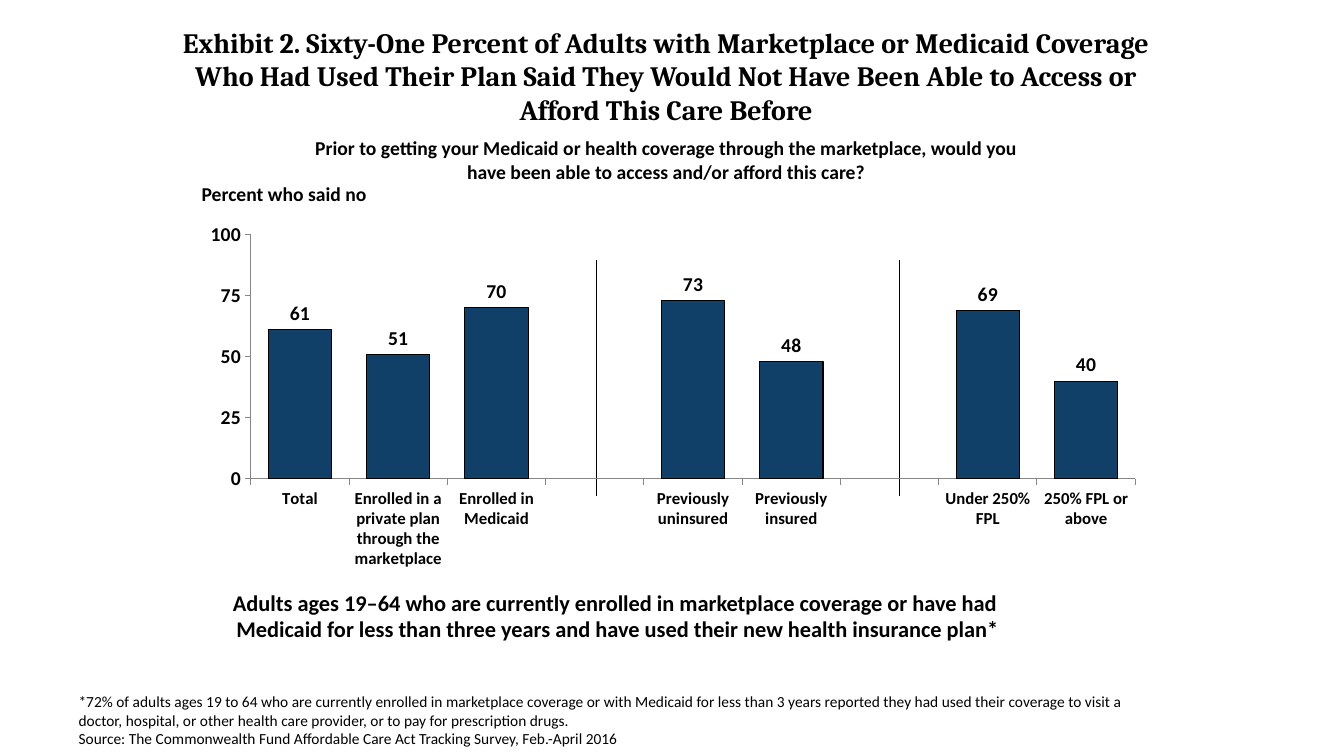
"""Build the slide on access to care before marketplace or Medicaid coverage."""
import lxml.etree
import pptx
import pptx.chart.data
import pptx.dml.color
import pptx.enum.chart
import pptx.enum.shapes
import pptx.enum.text
import pptx.oxml
import pptx.oxml.ns
import pptx.util

Cm = pptx.util.Cm
Pt = pptx.util.Pt
BLACK = pptx.dml.color.RGBColor(0x00, 0x00, 0x00)
NAVY = pptx.dml.color.RGBColor(0x10, 0x40, 0x68)
GRAY = pptx.dml.color.RGBColor(0x86, 0x86, 0x86)
CENTER = pptx.enum.text.PP_ALIGN.CENTER
LEFT = pptx.enum.text.PP_ALIGN.LEFT

ANSWERS = [
    ("Total", 61),
    ("Enrolled in a private plan through the marketplace", 51),
    ("Enrolled in Medicaid", 70),
    ("   ", None),
    ("Previously uninsured", 73),
    ("Previously insured", 48),
    ("  ", None),
    ("Under 250% FPL", 69),
    ("250% FPL or above", 40),
]
PLOT_AREA = {"x": 0.066, "y": 0.07, "w": 0.918, "h": 0.658}


class ExhibitPage:
    """Hold the style and the current slide, and add elements to it."""

    def __init__(self, deck, heading_font="Cambria", body_font="Calibri"):
        """Add a title-only slide to the deck."""
        self.page = deck.slides.add_slide(deck.slide_layouts[5])
        self.heading_font = heading_font
        self.body_font = body_font

    def style_font(self, font, name, size, bold):
        """Apply the black text style to a font."""
        font.name = name
        font.size = Pt(size)
        font.bold = bold
        font.color.rgb = BLACK

    def fill_frame(self, frame, text, name, size, bold, align):
        """Write text into a frame and format its runs."""
        frame.text = text
        frame.word_wrap = True
        frame.auto_size = pptx.enum.text.MSO_AUTO_SIZE.NONE
        frame.vertical_anchor = pptx.enum.text.MSO_ANCHOR.TOP
        for para in frame.paragraphs:
            para.alignment = align
            for span in para.runs:
                self.style_font(span.font, name, size, bold)

    def title(self, text, left, top, width, height):
        """Place and format the title placeholder."""
        box = self.page.shapes.title
        box.left, box.top, box.width, box.height = map(Cm, (left, top, width, height))
        self.fill_frame(box.text_frame, text, self.heading_font, 20, True, CENTER)

    def text(self, text, left, top, width, height, size, bold=True, align=CENTER):
        """Add a text box."""
        box = self.page.shapes.add_textbox(*map(Cm, (left, top, width, height)))
        self.fill_frame(box.text_frame, text, self.body_font, size, bold, align)

    def divider(self, x, top, bottom):
        """Add a vertical line between groups of bars."""
        line = self.page.shapes.add_connector(
            pptx.enum.shapes.MSO_CONNECTOR.STRAIGHT, Cm(x), Cm(bottom), Cm(x), Cm(top))
        line.line.color.rgb = BLACK
        line.line.width = Pt(0.75)
        properties = line._element.spPr
        lxml.etree.SubElement(properties, pptx.oxml.ns.qn("a:effectLst"))

    def style_axis(self, axis, size):
        """Format one chart axis."""
        axis.has_major_gridlines = False
        axis.major_tick_mark = pptx.enum.chart.XL_TICK_MARK.OUTSIDE
        axis.minor_tick_mark = pptx.enum.chart.XL_TICK_MARK.NONE
        axis.format.line.color.rgb = GRAY
        axis.format.line.width = Pt(0.75)
        self.style_font(axis.tick_labels.font, self.body_font, size, True)

    def place_plot(self, chart, fractions):
        """Fix the inner plot area as fractions of the chart."""
        plot_area = chart._chartSpace.chart.plotArea
        for old in plot_area.findall(pptx.oxml.ns.qn("c:layout")):
            plot_area.remove(old)
        modes = [("layoutTarget", "inner"), ("xMode", "edge"), ("yMode", "edge")]
        settings = "".join(
            f'<c:{tag} val="{value}"/>' for tag, value in modes + list(fractions.items()))
        plot_area.insert(0, pptx.oxml.parse_xml(
            f'<c:layout {pptx.oxml.ns.nsdecls("c")}>'
            f"<c:manualLayout>{settings}</c:manualLayout></c:layout>"))

    def column_chart(self, answers, left, top, width, height):
        """Add the column chart with value labels."""
        data = pptx.chart.data.CategoryChartData(number_format="0")
        data.categories = [group for group, percent in answers]
        data.add_series("Series 1", [percent for group, percent in answers])
        chart = self.page.shapes.add_chart(
            pptx.enum.chart.XL_CHART_TYPE.COLUMN_CLUSTERED,
            *map(Cm, (left, top, width, height)), data).chart
        chart.has_legend = False
        chart.has_title = False
        self.style_font(chart.font, self.body_font, 14, True)
        self.style_axis(chart.category_axis, 12)
        self.style_axis(chart.value_axis, 14)
        chart.value_axis.minimum_scale = 0
        chart.value_axis.maximum_scale = 100
        chart.value_axis.major_unit = 25
        chart.value_axis.tick_labels.number_format = "0"
        chart.value_axis.tick_labels.number_format_is_linked = False

        plot = chart.plots[0]
        plot.gap_width = 55
        plot.vary_by_categories = False
        bars = plot.series[0]
        bars.invert_if_negative = False
        bars.format.fill.solid()
        bars.format.fill.fore_color.rgb = NAVY
        bars.format.line.color.rgb = BLACK
        bars.format.line.width = Pt(0.75)
        labels = bars.data_labels
        labels.show_value = True
        labels.position = pptx.enum.chart.XL_LABEL_POSITION.OUTSIDE_END
        labels.number_format = "0"
        labels.number_format_is_linked = False
        self.style_font(labels.font, self.body_font, 14, True)
        self.place_plot(chart, PLOT_AREA)


def main():
    """Build and save the deck."""
    deck = pptx.Presentation()
    deck.slide_width = Cm(33.87)
    deck.slide_height = Cm(19.05)
    exhibit = ExhibitPage(deck)
    exhibit.title(
        "Exhibit 2. Sixty-One Percent of Adults with Marketplace or Medicaid Coverage "
        "Who Had Used Their Plan Said They Would Not Have Been Able to Access or "
        "Afford This Care Before", 4.09, 0.51, 25.4, 2.03)
    exhibit.text(
        "*72% of adults ages 19 to 64 who are currently enrolled in marketplace coverage "
        "or with Medicaid for less than 3 years reported they had used their coverage to "
        "visit a doctor, hospital, or other health care provider, or to pay for "
        "prescription drugs.\n"
        "Source: The Commonwealth Fund Affordable Care Act Tracking Survey, "
        "Feb.-April 2016", 1.73, 17.32, 27.76, 1.68, 11, bold=False, align=LEFT)
    exhibit.text("Percent who said no", 4.83, 4.45, 5.84, 0.86, 14, align=LEFT)
    for x in (15.04, 22.66):
        exhibit.divider(x, 6.55, 12.5)
    exhibit.text(
        "Prior to getting your Medicaid or health coverage through the marketplace, "
        "would you have been able to access and/or afford this care?",
        7.52, 3.3, 18.54, 1.45, 14)
    exhibit.text(
        "Adults ages 19–64 who are currently enrolled in marketplace coverage or have had "
        "\vMedicaid for less than three years and have used their new health insurance "
        "plan*", 4.37, 14.71, 22.4, 1.63, 16)
    exhibit.column_chart(ANSWERS, 4.72, 5.26, 24.28, 9.35)
    deck.save("out.pptx")


if __name__ == "__main__":
    main()
